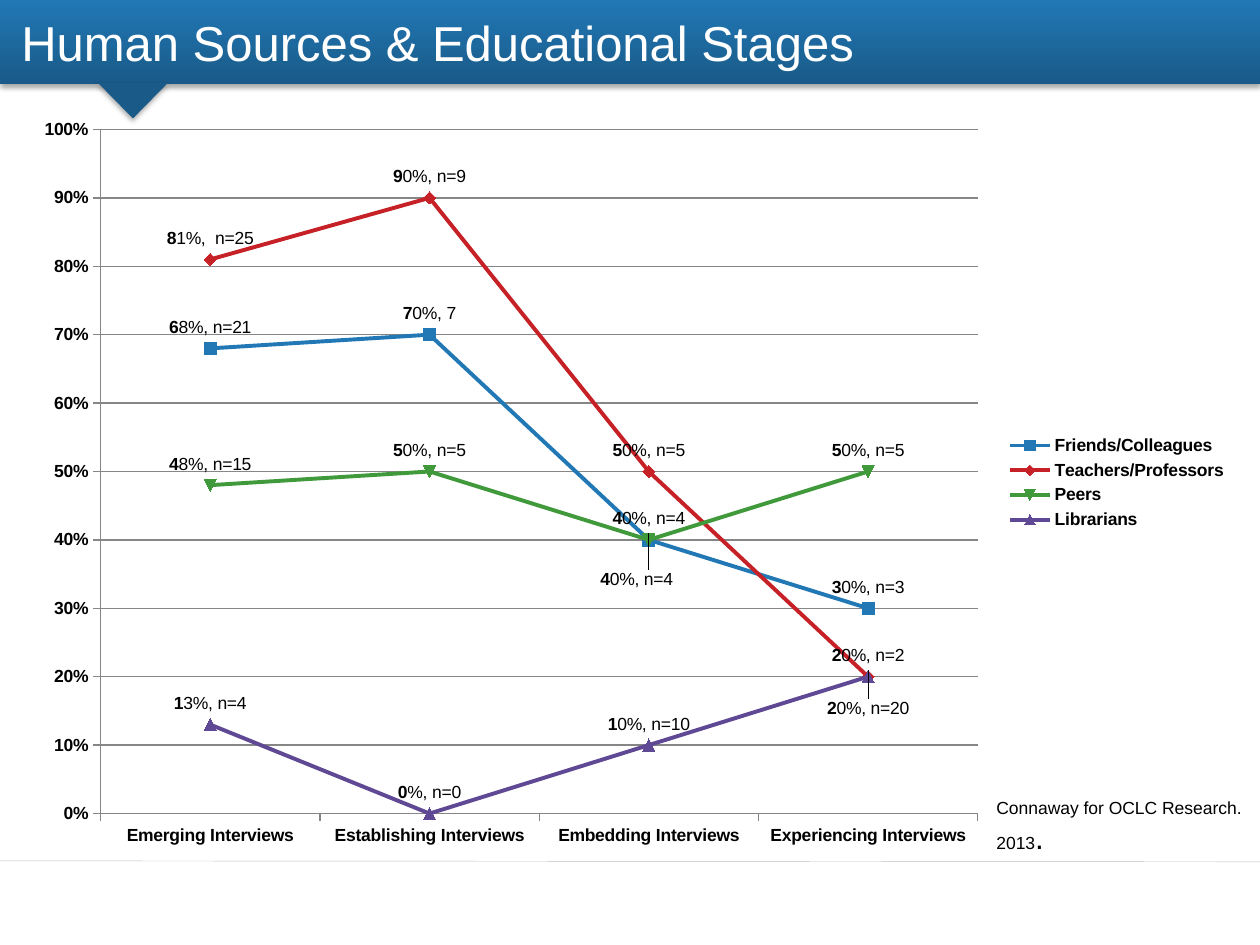
import pptx
import pptx.chart.data
import pptx.dml.color
import pptx.enum.chart
import pptx.enum.shapes
import pptx.enum.text
import pptx.oxml
import pptx.oxml.ns
import pptx.util

Pt = pptx.util.Pt
Kind = pptx.enum.shapes.MSO_SHAPE
Spot = pptx.enum.chart.XL_LABEL_POSITION
Tick = pptx.enum.chart.XL_TICK_MARK
SPACE = pptx.oxml.ns.nsdecls("a", "c")

deck = pptx.Presentation()
deck.slide_width = pptx.util.Inches(10)
deck.slide_height = pptx.util.Inches(7.5)
slide = deck.slides.add_slide(deck.slide_layouts[6])
shapes = slide.shapes


def ink(code):
    return pptx.dml.color.RGBColor.from_string(code)


def share(left, top, width, height):
    wide, high = deck.slide_width / 100, deck.slide_height / 100
    return [round(part) for part in (left * wide, top * high, width * wide, height * high)]


left, top, width, height = share(0, 91.1, 100, 0.1)
rule = shapes.add_connector(
    pptx.enum.shapes.MSO_CONNECTOR.STRAIGHT, left, top, left + width, top + height)
rule.line.color.rgb = ink("BFBFBF")
rule.line.width = Pt(0.25)
rule._element.spPr.append(pptx.oxml.parse_xml(f"<a:effectLst {SPACE}/>"))

band = shapes.add_shape(Kind.RECTANGLE, *share(0, 0, 100, 8.93))
band.fill.gradient()
band.fill.gradient_angle = 90
for stop, code, place in zip(band.fill.gradient_stops, ("195A88", "2178B5"), (0, 1)):
    stop.color.rgb = ink(code)
    stop.position = place

tip = shapes.add_shape(Kind.ISOSCELES_TRIANGLE, *share(7.8, 8.8, 5.5, 3.73))
tip.rotation = 180
tip.fill.solid()
tip.fill.fore_color.rgb = ink("195A88")

for shape in (band, tip):
    shape.line.fill.background()
    shape._element.spPr.append(pptx.oxml.parse_xml(
        f'<a:effectLst {SPACE}><a:outerShdw blurRad="{Pt(3.1)}" dist="{Pt(1.8)}" '
        'dir="5400000" rotWithShape="0"><a:srgbClr val="000000"><a:alpha val="35000"/>'
        '</a:srgbClr></a:outerShdw></a:effectLst>'))

title = shapes.add_textbox(*share(1.7, 0, 93.3, 8.93)).text_frame
title.margin_left = title.margin_right = 0
title.vertical_anchor = pptx.enum.text.MSO_ANCHOR.MIDDLE
note = shapes.add_textbox(*share(78.1, 83.73, 23.6, 7.6)).text_frame
for frame, words, size, code in (
    (title, "Human Sources & Educational Stages", 28, "FFFFFF"),
    (note, "Connaway for OCLC Research. 2013", 10, "000000"),
    (note, ".", 18, "000000"),
):
    frame.word_wrap = True
    run = frame.paragraphs[0].add_run()
    run.text = words
    run.font.name = "Arial"
    run.font.size = Pt(size)
    run.font.color.rgb = ink(code)

groups = (
    ("Friends/Colleagues", "2178B5", (0.68, 0.7, 0.4, 0.3),
     ("68%, n=21", "70%, 7", "40%, n=4", "30%, n=3")),
    ("Teachers/Professors", "C52127", (0.81, 0.9, 0.5, 0.2),
     ("81%,  n=25", "90%, n=9", "50%, n=5", "20%, n=2")),
    ("Peers", "409A3C", (0.48, 0.5, 0.4, 0.5),
     ("48%, n=15", "50%, n=5", "40%, n=4", "50%, n=5")),
    ("Librarians", "5F4894", (0.13, 0, 0.1, 0.2),
     ("13%, n=4", "0%, n=0", "10%, n=10", "20%, n=20")),
)
shifts = {("Peers", 2): (-0.01, 0.08), ("Librarians", 3): (0, 0.07)}

data = pptx.chart.data.CategoryChartData(number_format="0%")
data.categories = [stage + " Interviews" for stage in
                   ("Emerging", "Establishing", "Embedding", "Experiencing")]
for name, code, values, tags in groups:
    data.add_series(name, values)
chart = shapes.add_chart(
    pptx.enum.chart.XL_CHART_TYPE.LINE_MARKERS, *share(1.7, 11.07, 96.7, 80), data).chart
chart.has_title = False
chart.font.name = "Arial"
chart.font.size = Pt(10)
chart.font.color.rgb = ink("000000")
chart.has_legend = True
chart.legend.position = pptx.enum.chart.XL_LEGEND_POSITION.RIGHT
chart.legend.include_in_layout = False
chart.legend.font.bold = True
chart.legend.font.size = Pt(10)

area = chart._chartSpace.chart.plotArea
for old in area.xpath("c:layout"):
    area.remove(old)
area.insert(0, pptx.oxml.parse_xml(
    f'<c:layout {SPACE}><c:manualLayout><c:layoutTarget val="inner"/>'
    '<c:xMode val="edge"/><c:yMode val="edge"/><c:x val="0.065"/><c:y val="0.033"/>'
    '<c:w val="0.72"/><c:h val="0.905"/></c:manualLayout></c:layout>'))

scale = chart.value_axis
scale.minimum_scale, scale.maximum_scale, scale.major_unit = 0, 1, 0.1
scale.tick_labels.number_format = "0%"
scale.tick_labels.number_format_is_linked = False
scale.has_major_gridlines = True
for axis in (scale, chart.category_axis):
    axis.major_tick_mark = Tick.OUTSIDE
    axis.tick_labels.font.bold = True
    axis.tick_labels.font.size = Pt(10)
for part in (scale, scale.major_gridlines, chart.category_axis):
    part.format.line.color.rgb = ink("868686")
    part.format.line.width = Pt(0.75)

for series, (name, code, values, tags) in zip(chart.plots[0].series, groups):
    series.smooth = False
    series.format.line.color.rgb = ink(code)
    series.format.line.width = Pt(2.25)
    series.marker.size = 7
    series.marker.format.fill.solid()
    series.marker.format.fill.fore_color.rgb = ink(code)
    series.marker.format.line.color.rgb = ink(code)
    for spot, tag in enumerate(tags):
        label = series.points[spot].data_label
        for words, bold in ((tag[0], True), (tag[1:], False)):
            run = label.text_frame.paragraphs[0].add_run()
            run.text = words
            run.font.bold = bold
            run.font.size = Pt(10)
            run.font.name = "Arial"
            run.font.color.rgb = ink("000000")
        label.position = Spot.ABOVE
        if (name, spot) in shifts:
            across, down = shifts[name, spot]
            mark = series._element.xpath(f'.//c:dLbl/c:idx[@val="{spot}"]')[0]
            mark.addnext(pptx.oxml.parse_xml(
                f'<c:layout {SPACE}><c:manualLayout><c:x val="{across}"/>'
                f'<c:y val="{down}"/></c:manualLayout></c:layout>'))

deck.save("out.pptx")
